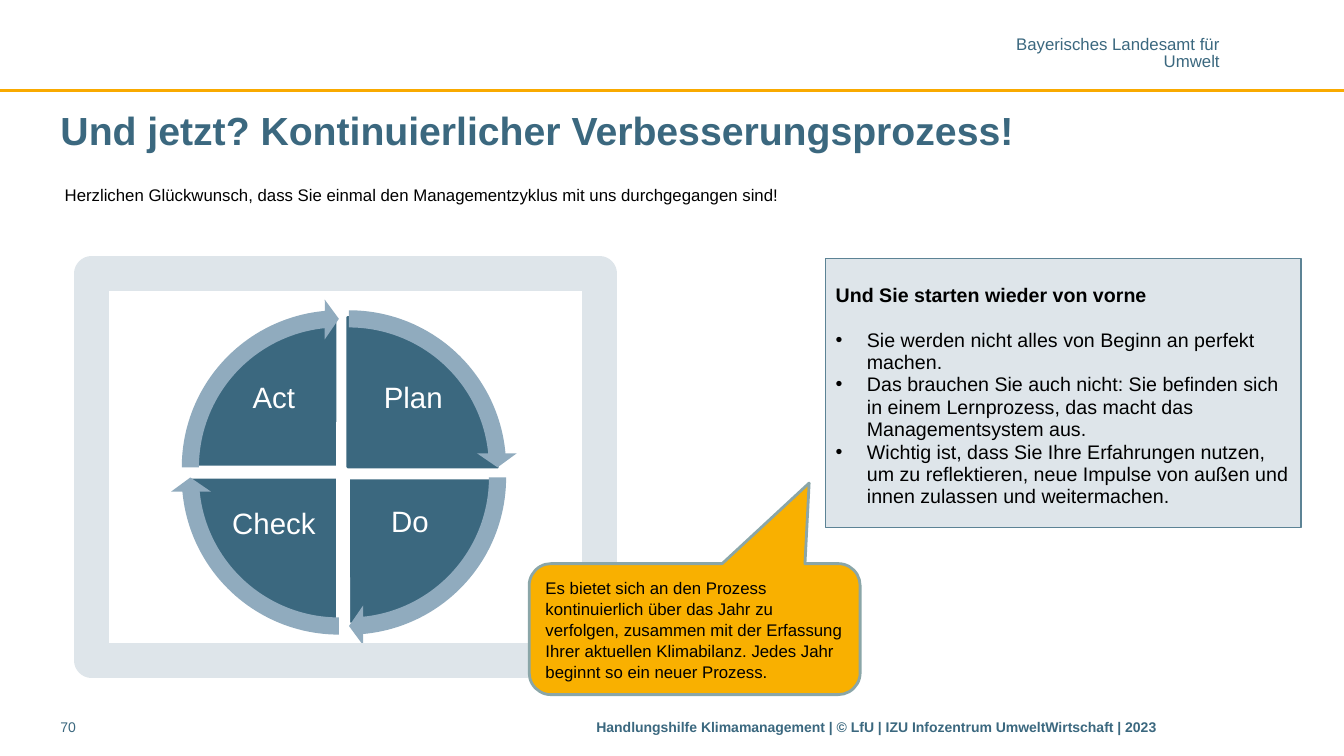
from pptx import Presentation
from pptx.dml.color import RGBColor
from pptx.enum.shapes import MSO_CONNECTOR, MSO_SHAPE
from pptx.enum.text import MSO_ANCHOR, PP_ALIGN
from pptx.oxml.ns import qn
from pptx.util import Inches, Pt
from lxml import etree

TOP, MIDDLE = MSO_ANCHOR.TOP, MSO_ANCHOR.MIDDLE
LEFT, CENTER, RIGHT = PP_ALIGN.LEFT, PP_ALIGN.CENTER, PP_ALIGN.RIGHT
RECTANGLE, PIE = MSO_SHAPE.RECTANGLE, MSO_SHAPE.PIE
ARROW, CALLOUT = MSO_SHAPE.CIRCULAR_ARROW, MSO_SHAPE.ROUNDED_RECTANGULAR_CALLOUT
STRAIGHT = MSO_CONNECTOR.STRAIGHT

FONT = "Arial"
BLUE, LIGHT_BLUE, PALE = "3B687F", "90ABBE", "DEE5EA"
BLACK, WHITE = "000000", "FFFFFF"
COLUMNS, ROWS = 16, 9
FULL_TURN, QUARTER = 216, 54
FLAT = (0, 0.05, 0, 0.05)
PADDED = (0.1, 0.05, 0.1, 0.05)


def color(value):
    return RGBColor.from_string(value)


class SlideBuilder:
    def __init__(self, presentation):
        self.column = presentation.slide_width / COLUMNS
        self.row = presentation.slide_height / ROWS
        self.slide = presentation.slides.add_slide(presentation.slide_layouts[6])

    def place(self, left, top, width, height):
        return (round(left * self.column), round(top * self.row),
                round(width * self.column), round(height * self.row))

    def rule(self, row, line, weight):
        left, top, width, _ = self.place(0, row, COLUMNS, 0)
        connector = self.slide.shapes.add_connector(STRAIGHT, left, top, left + width, top)
        connector.line.color.rgb = color(line)
        connector.line.width = Pt(weight)
        etree.SubElement(connector._element.spPr, qn("a:effectLst"))

    def shape(self, kind, at, fill=None, line=None, weight=0, adjustments=()):
        shape = self.slide.shapes.add_shape(kind, *self.place(*at))
        shape.shadow.inherit = False
        for index, value in enumerate(adjustments):
            shape.adjustments[index] = value
        if fill:
            shape.fill.solid()
            shape.fill.fore_color.rgb = color(fill)
        else:
            shape.fill.background()
        if line:
            shape.line.color.rgb = color(line)
            shape.line.width = Pt(weight)
        else:
            shape.line.fill.background()
        return shape

    def frame(self, shape, insets, anchor):
        frame = shape.text_frame
        frame.word_wrap = True
        frame.vertical_anchor = anchor
        (frame.margin_left, frame.margin_top,
         frame.margin_right, frame.margin_bottom) = map(Inches, insets)
        return frame

    def fill_paragraph(self, paragraph, text, size, ink, bold=False, align=LEFT,
                       spacing=None, bullet=False):
        paragraph.text = text
        paragraph.alignment = align
        paragraph.line_spacing = spacing
        if bullet:
            properties = paragraph._p.get_or_add_pPr()
            properties.set("marL", str(Inches(0.31)))
            properties.set("indent", str(-Inches(0.31)))
            etree.SubElement(properties, qn("a:buFont"), typeface=FONT)
            etree.SubElement(properties, qn("a:buChar"), char="•")
        font = paragraph.font
        font.name, font.size, font.bold = FONT, Pt(size), bold
        font.color.rgb = color(ink)

    def text(self, at, lines, size, ink, insets=FLAT, anchor=TOP, **style):
        box = self.slide.shapes.add_textbox(*self.place(*at))
        frame = self.frame(box, insets, anchor)
        for index, line in enumerate(lines):
            paragraph = frame.add_paragraph() if index else frame.paragraphs[0]
            self.fill_paragraph(paragraph, line, size, ink, **style)

    def cycle(self, phases):
        for index, (name, pie, label, outline) in enumerate(phases):
            start = (162 + index * QUARTER) % FULL_TURN
            end = (start + QUARTER) % FULL_TURN
            self.shape(PIE, pie, BLUE, outline, 2, (start, end))
            self.text((*label, 1.32, 0.97), [name], 21, WHITE, (0.03,) * 4, MIDDLE,
                      align=CENTER, spacing=0.9)
        for index in range(len(phases)):
            start = (162 + index * QUARTER) % FULL_TURN
            left = 2.15 if index < 2 else 2.03
            top = 3.68 if index in (1, 2) else 3.56
            self.shape(ARROW, (left, top, 4.01, 4.01), LIGHT_BLUE,
                       adjustments=(0.051, 3.275, start + 50.725, start, 0.059))

    def panel(self, at, heading, bullets):
        panel = self.shape(RECTANGLE, at, PALE, "5C8395", 1)
        frame = self.frame(panel, (0.1, 0.25, 0.1, 0.05), TOP)
        self.fill_paragraph(frame.paragraphs[0], heading, 14, BLACK, True, spacing=Pt(16))
        for index, bullet in enumerate(bullets):
            paragraph = frame.add_paragraph()
            paragraph.space_before = Pt(0 if index else 16)
            self.fill_paragraph(paragraph, bullet, 14, BLACK, spacing=Pt(16), bullet=True)

    def callout(self, at, text):
        callout = self.shape(CALLOUT, at, "F9B000", "8AA6A8", 2, (0.346, -1.115, 0.167))
        frame = self.frame(callout, PADDED, MIDDLE)
        self.fill_paragraph(frame.paragraphs[0], text, 12, BLACK, spacing=1.05)


def main():
    presentation = Presentation()
    presentation.slide_width, presentation.slide_height = Inches(13.33), Inches(7.5)
    builder = SlideBuilder(presentation)

    builder.rule(1.08, "F9AA00", 2)
    builder.text((11.76, 0.44, 2.76, 0.41), ["Bayerisches Landesamt für", "Umwelt"],
                 12, BLUE, (0,) * 4, align=RIGHT, spacing=0.85)
    builder.text((0.72, 1.22, 14.77, 0.66),
                 ["Und jetzt? Kontinuierlicher Verbesserungsprozess!"],
                 28, BLUE, anchor=MIDDLE, bold=True)
    builder.cycle([
        ("Plan", (2.36, 3.78, 3.56, 3.56), (4.26, 4.27), BLUE),
        ("Do", (2.44, 3.95, 3.42, 3.48), (4.22, 5.74), WHITE),
        ("Check", (2.24, 3.9, 3.56, 3.56), (2.6, 5.76), WHITE),
        ("Act", (2.24, 3.78, 3.56, 3.56), (2.6, 4.27), WHITE),
    ])
    builder.text((7.1, 8.5, 8.39, 0.37),
                 ["Handlungshilfe Klimamanagement | © LfU | IZU Infozentrum UmweltWirtschaft | 2023"],
                 10, BLUE, bold=True)
    builder.text((0.72, 8.5, 0.84, 0.37), ["70"], 10, BLUE)
    builder.shape(RECTANGLE, (1.09, 3.26, 6.05, 4.6), line=PALE, weight=25)
    builder.panel((9.83, 3.08, 5.66, 3.2), "Und Sie starten wieder von vorne", [
        "Sie werden nicht alles von Beginn an perfekt machen.",
        "Das brauchen Sie auch nicht: Sie befinden sich in einem Lernprozess, "
        "das macht das Managementsystem aus.",
        "Wichtig ist, dass Sie Ihre Erfahrungen nutzen, um zu reflektieren, "
        "neue Impulse von außen und innen zulassen und weitermachen.",
    ])
    builder.text((0.77, 2.11, 14.27, 1.14),
                 ["Herzlichen Glückwunsch, dass Sie einmal den Managementzyklus "
                  "mit uns durchgegangen sind!"],
                 12, BLACK, spacing=Pt(16))
    builder.callout((6.3, 6.71, 3.94, 1.56),
                    "Es bietet sich an den Prozess kontinuierlich über das Jahr zu verfolgen, "
                    "zusammen mit der Erfassung Ihrer aktuellen Klimabilanz. "
                    "Jedes Jahr beginnt so ein neuer Prozess.")
    presentation.save("out.pptx")


if __name__ == "__main__":
    main()
